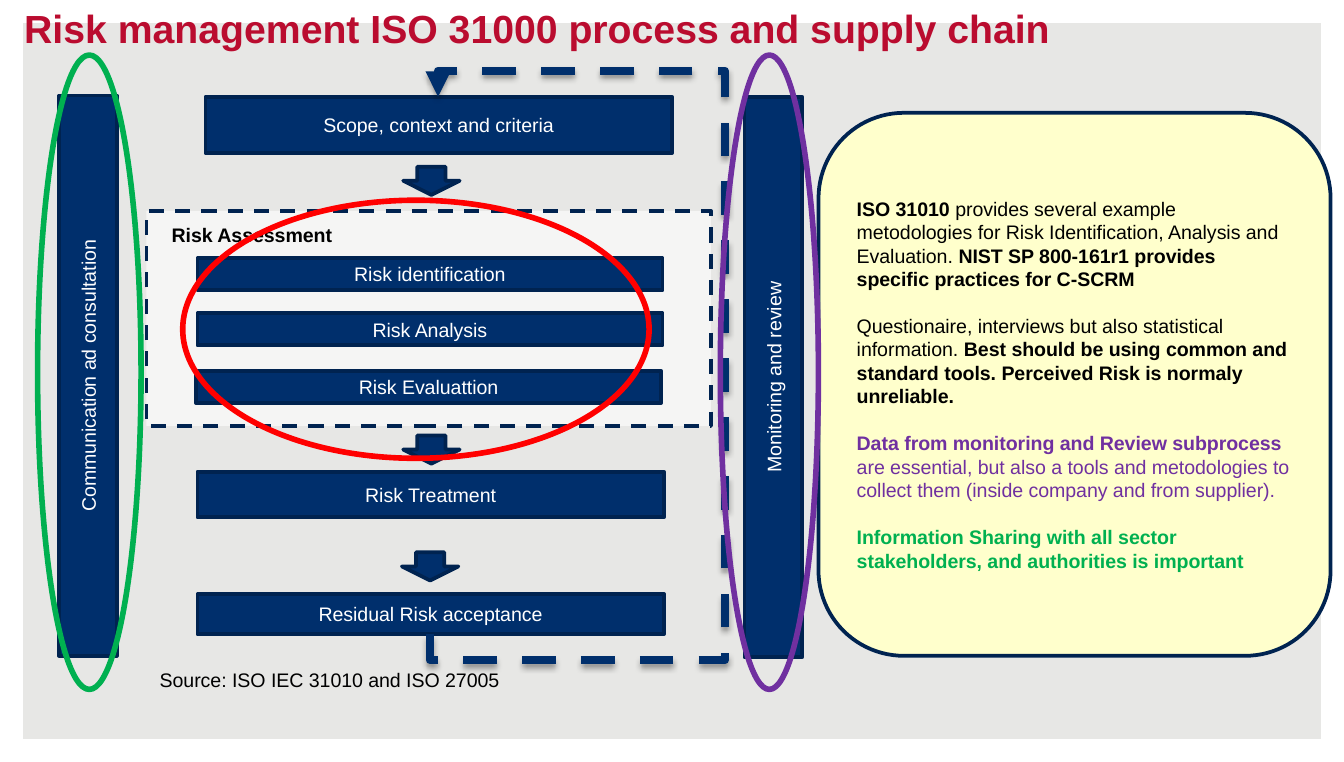
import pptx
import pptx.dml.color
import pptx.enum.dml
import pptx.enum.shapes
import pptx.enum.text
import pptx.oxml
import pptx.oxml.ns
import pptx.util

Inches = pptx.util.Inches
Pt = pptx.util.Pt
Kind = pptx.enum.shapes.MSO_SHAPE
Anchor = pptx.enum.text.MSO_ANCHOR
Align = pptx.enum.text.PP_ALIGN
Dash = pptx.enum.dml.MSO_LINE

NAVY, EDGE, BLACK, WHITE = "002F6C", "002350", "000000", "FFFFFF"
PURPLE, GREEN, RED = "7030A0", "00B050", "FF0000"


def color(value):
    return pptx.dml.color.RGBColor.from_string(value)


def add_span(para, text, ink=BLACK, bold=False, size=10.5):
    span = para.add_run()
    span.text = text
    span.font.name = "Arial"
    span.font.size = Pt(size)
    span.font.bold = bold
    span.font.color.rgb = color(ink)


def add_box(page, kind, place, fill=None, line=EDGE, width=2):
    box = page.shapes.add_shape(kind, *map(Inches, place))
    box.shadow.inherit = False
    if fill:
        box.fill.solid()
        box.fill.fore_color.rgb = color(fill)
    else:
        box.fill.background()
    if line:
        box.line.color.rgb = color(line)
        box.line.width = Pt(width)
    else:
        box.line.fill.background()
    return box


def add_bar(page, place, text, rotation=0):
    bar = add_box(page, Kind.RECTANGLE, place, NAVY)
    bar.rotation = rotation
    bar.text_frame.vertical_anchor = Anchor.MIDDLE
    para = bar.text_frame.paragraphs[0]
    para.alignment = Align.CENTER
    add_span(para, text, WHITE)


def add_label(page, place, text, bold=False, align=Align.LEFT, wrap=True):
    box = page.shapes.add_textbox(*map(Inches, place))
    box.text_frame.word_wrap = wrap
    para = box.text_frame.paragraphs[0]
    para.alignment = align
    add_span(para, text, bold=bold)


def add_title(page, text):
    title = page.shapes.title
    title.left, title.top, title.width, title.height = map(Inches, (0.18, 0.07, 8.95, 0.37))
    frame = title.text_frame
    frame.margin_left = frame.margin_right = frame.margin_top = frame.margin_bottom = 0
    frame.auto_size = pptx.enum.text.MSO_AUTO_SIZE.NONE
    frame.vertical_anchor = Anchor.TOP
    para = frame.paragraphs[0]
    para.alignment = Align.LEFT
    para.line_spacing = 0.9
    add_span(para, text, "BA0C2F", True, 21)


def add_backdrop(page):
    page.background.fill.solid()
    page.background.fill.fore_color.rgb = color("E7E7E5")
    border = add_box(page, Kind.FRAME, (0, 0, 10, 5.67), WHITE, None)
    border.adjustments[0] = 0.03
    page.shapes._spTree.insert(2, border._element)


def add_feedback_loop(page):
    length, offset = 4, 0.06
    loop = page.shapes.add_connector(
        pptx.enum.shapes.MSO_CONNECTOR.ELBOW,
        Inches(5.23), Inches(2.75), Inches(5.23 - length), Inches(2.75 - offset))
    loop.line.color.rgb = color(NAVY)
    loop.line.width = Pt(4.5)
    loop.line.dash_style = Dash.DASH
    properties = loop._element.spPr
    properties.xfrm.set("rot", "5400000")
    geometry = properties.find(pptx.oxml.ns.qn("a:prstGeom"))
    geometry.set("prst", "bentConnector5")
    guides = geometry.get_or_add_avLst()
    space = pptx.oxml.ns.nsdecls("a")
    bends = (-0.19 / length, 2.2 / offset, 1 + 0.19 / length)
    for number, bend in enumerate(bends, 1):
        guides.append(pptx.oxml.parse_xml(
            f'<a:gd {space} name="adj{number}" fmla="val {round(bend * 100000)}"/>'))
    loop.line._get_or_add_ln().append(
        pptx.oxml.parse_xml(f'<a:tailEnd {space} type="triangle"/>'))
    properties.append(pptx.oxml.parse_xml(
        f'<a:effectLst {space}><a:outerShdw blurRad="{Pt(3.1)}" dist="{Pt(1.8)}" '
        'dir="5400000" rotWithShape="0"><a:srgbClr val="000000">'
        '<a:alpha val="35000"/></a:srgbClr></a:outerShdw></a:effectLst>'))


def add_notes_panel(page, paragraphs):
    panel = add_box(page, Kind.ROUNDED_RECTANGLE, (6.09, 0.84, 3.81, 4.04), "FFFFCC")
    frame = panel.text_frame
    frame.word_wrap = True
    frame.vertical_anchor = Anchor.MIDDLE
    for index, spans in enumerate(paragraphs):
        para = frame.add_paragraph() if index else frame.paragraphs[0]
        para.alignment = Align.LEFT
        if index:
            para.space_before = Pt(12.5)
        for text, ink, bold in spans:
            add_span(para, text, ink, bold)


def add_assessment(page):
    area = add_box(page, Kind.RECTANGLE, (1.09, 1.57, 4.2, 1.6), "F5F5F4")
    area.line.dash_style = Dash.DASH
    for left, top, text in ((1.47, 1.92, "Risk identification"),
                            (1.47, 2.33, "Risk Analysis"),
                            (1.46, 2.76, "Risk Evaluattion")):
        add_bar(page, (left, top, 3.46, 0.24), text)
    add_label(page, (1.09, 1.61, 1.57, 0.28), "Risk Assessment", True, Align.CENTER)


def main():
    deck = pptx.Presentation()
    deck.slide_width, deck.slide_height = Inches(10), Inches(5.67)
    page = deck.slides.add_slide(deck.slide_layouts[5])
    add_backdrop(page)
    add_title(page, "Risk management ISO 31000 process and supply chain")

    add_bar(page, (1.53, 0.72, 3.47, 0.42), "Scope, context and criteria")
    add_bar(page, (3.67, 2.59, 4.17, 0.43), "Monitoring and review", 270)
    add_assessment(page)
    add_bar(page, (1.47, 3.51, 3.47, 0.34), "Risk Treatment")
    add_bar(page, (1.47, 4.42, 3.47, 0.3), "Residual Risk acceptance")
    add_bar(page, (-1.43, 2.58, 4.17, 0.43), "Communication ad consultation", 270)
    for left, top in ((3, 1.24), (3, 3.24), (2.99, 4.11)):
        add_box(page, Kind.DOWN_ARROW, (left, top, 0.42, 0.21), NAVY)
    add_feedback_loop(page)

    add_notes_panel(page, [
        [("ISO 31010 ", BLACK, True),
         ("provides several example metodologies for Risk Identification, "
          "Analysis and Evaluation. ", BLACK, False),
         ("NIST SP 800-161r1 provides specific practices for C-SCRM", BLACK, True)],
        [("Questionaire, interviews but also statistical information. ", BLACK, False),
         ("Best should be using common and standard tools. "
          "Perceived Risk is normaly unreliable.", BLACK, True)],
        [("Data from monitoring and Review subprocess ", PURPLE, True),
         ("are essential, but also a tools and metodologies to collect them "
          "(inside company and from supplier).", PURPLE, False)],
        [("Information Sharing with all sector stakeholders, "
          "and authorities is important", GREEN, True)],
    ])
    for place, ink in (((1.36, 1.49, 3.47, 1.92), RED),
                       ((0.28, 0.41, 0.77, 4.72), GREEN),
                       ((5.36, 0.41, 0.73, 4.72), PURPLE)):
        add_box(page, Kind.OVAL, place, line=ink, width=3)
    add_label(page, (1.09, 4.92, 2.77, 0.28), "Source: ISO IEC 31010 and ISO 27005", wrap=False)
    deck.save("out.pptx")


if __name__ == "__main__":
    main()
